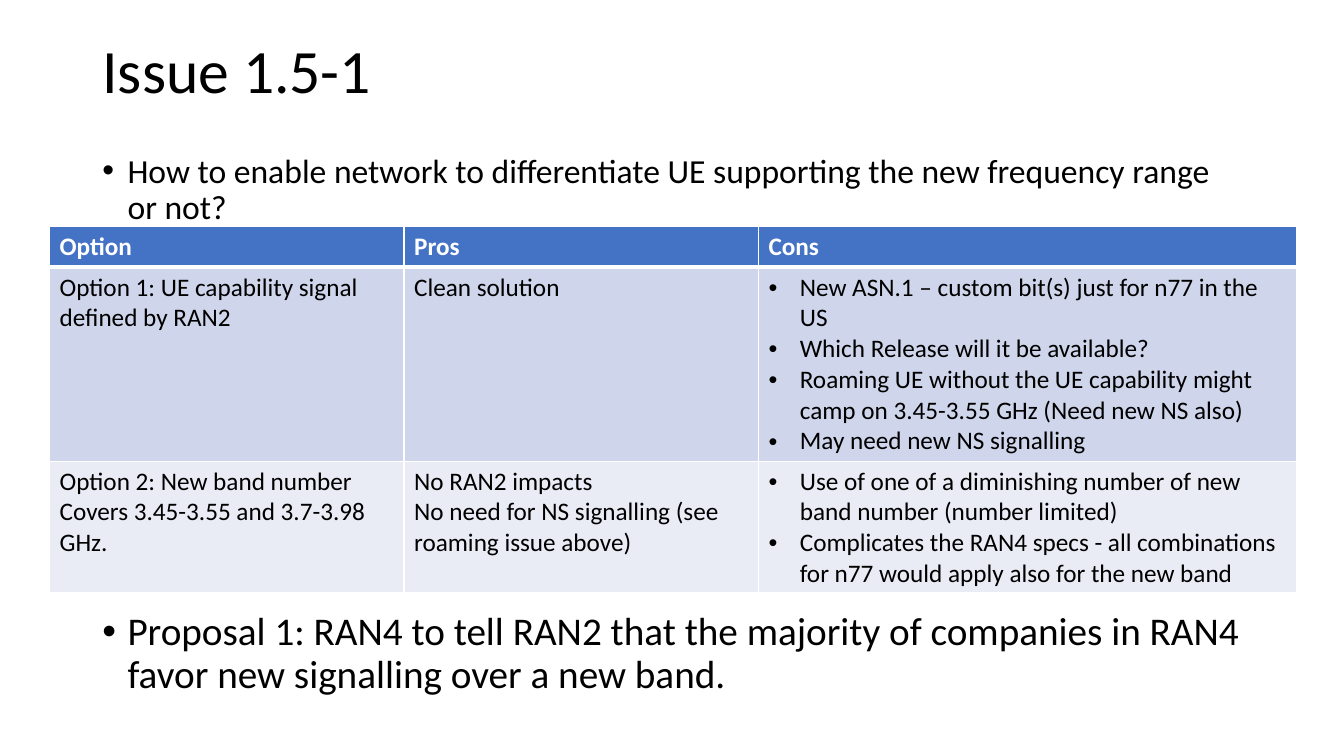
"""Build the Issue 1.5-1 slide comparing two signalling options."""
from dataclasses import dataclass

import pptx
import pptx.dml.color
import pptx.enum.text
import pptx.oxml.ns
import pptx.util
from lxml import etree

COLORS = {
    "text": "000000",
    "white": "FFFFFF",
    "header": "4472C4",
    "option 1": "CFD5EA",
    "option 2": "E9EBF5",
}
FONT = "Calibri"
SLIDE_WIDTH = pptx.util.Inches(13.33)
SLIDE_HEIGHT = pptx.util.Inches(7.5)
GRID_COLUMNS, GRID_ROWS = 160, 90


@dataclass(frozen=True)
class Area:
    column: float
    row: float
    columns: float
    rows: float

    def lengths(self) -> tuple[int, int, int, int]:
        return across(self.column), down(self.row), across(self.columns), down(self.rows)


@dataclass(frozen=True)
class TextStyle:
    size: float
    color: str = "text"
    bold: bool = False
    line_spacing: float = 1.0
    bullet_indent: float = 0


@dataclass(frozen=True)
class Statement:
    area: Area
    text: str
    size: float


@dataclass(frozen=True)
class OptionRow:
    rows: float
    fill: str
    option: str
    pros: tuple[str, ...]
    cons: tuple[str, ...]


TITLE = Statement(Area(11, 0, 138, 17.4), "Issue 1.5-1", 44)
STATEMENTS = (
    Statement(
        Area(11, 17.75, 138, 12.25),
        "How to enable network to differentiate UE supporting the new frequency range or not?",
        24,
    ),
    Statement(
        Area(11, 72.25, 138, 12.25),
        "Proposal 1: RAN4 to tell RAN2 that the majority of companies in RAN4 "
        "favor new signalling over a new band.",
        28,
    ),
)
TABLE_COLUMN, TABLE_ROW = 5.9, 26.9
TABLE_COLUMNS = (42.2, 42.2, 64)
OPTION_ROWS = (
    OptionRow(4.9, "header", "Option", ("Pros",), ("Cons",)),
    OptionRow(
        23.1,
        "option 1",
        "Option 1: UE capability signal defined by RAN2",
        ("Clean solution",),
        (
            "New ASN.1 – custom bit(s) just for n77 in the US",
            "Which Release will it be available?",
            "Roaming UE without the UE capability might camp on 3.45-3.55 GHz (Need new NS also)",
            "May need new NS signalling",
        ),
    ),
    OptionRow(
        15.3,
        "option 2",
        "Option 2: New band number Covers 3.45-3.55 and 3.7-3.98 GHz.",
        ("No RAN2 impacts", "No need for NS signalling (see roaming issue above)"),
        (
            "Use of one of a diminishing number of new band number (number limited)",
            "Complicates the RAN4 specs - all combinations for n77 would apply also for the new band",
        ),
    ),
)


def across(columns: float) -> int:
    return round(SLIDE_WIDTH * columns / GRID_COLUMNS)


def down(rows: float) -> int:
    return round(SLIDE_HEIGHT * rows / GRID_ROWS)


def rgb(name: str) -> pptx.dml.color.RGBColor:
    return pptx.dml.color.RGBColor.from_string(COLORS[name])


def add_bullet(paragraph, indent: float) -> None:
    properties = paragraph._p.get_or_add_pPr()
    properties.set("marL", str(pptx.util.Inches(indent)))
    properties.set("indent", str(-pptx.util.Inches(indent)))
    for tag, attribute, value in (("a:buFont", "typeface", "Arial"), ("a:buChar", "char", "•")):
        element = etree.SubElement(properties, pptx.oxml.ns.qn(tag))
        element.set(attribute, value)


def write_text(text_frame, texts: tuple[str, ...], style: TextStyle) -> None:
    text_frame.word_wrap = True
    for index, text in enumerate(texts):
        paragraph = text_frame.add_paragraph() if index else text_frame.paragraphs[0]
        if style.bullet_indent:
            add_bullet(paragraph, style.bullet_indent)
        paragraph.alignment = pptx.enum.text.PP_ALIGN.LEFT
        paragraph.line_spacing = style.line_spacing
        run = paragraph.add_run()
        run.text = text
        run.font.name = FONT
        run.font.size = pptx.util.Pt(style.size)
        run.font.bold = style.bold
        run.font.color.rgb = rgb(style.color)


def add_title(slide) -> None:
    title = slide.shapes.title
    title.left, title.top, title.width, title.height = TITLE.area.lengths()
    title.text_frame.vertical_anchor = pptx.enum.text.MSO_ANCHOR.MIDDLE
    title.text_frame.auto_size = pptx.enum.text.MSO_AUTO_SIZE.NONE
    write_text(title.text_frame, (TITLE.text,), TextStyle(TITLE.size, line_spacing=0.9))


def add_statement(slide, statement: Statement) -> None:
    shape = slide.shapes.add_textbox(*statement.area.lengths())
    style = TextStyle(statement.size, line_spacing=0.9, bullet_indent=0.25)
    write_text(shape.text_frame, (statement.text,), style)


def set_borders(cell, bottom: float) -> None:
    properties = cell._tc.get_or_add_tcPr()
    for index, (side, width) in enumerate((("L", 1), ("R", 1), ("T", 1), ("B", bottom))):
        line = etree.Element(pptx.oxml.ns.qn(f"a:ln{side}"), w=str(pptx.util.Pt(width)))
        fill = etree.SubElement(line, pptx.oxml.ns.qn("a:solidFill"))
        etree.SubElement(fill, pptx.oxml.ns.qn("a:srgbClr"), val=COLORS["white"])
        properties.insert(index, line)


def add_option_table(slide) -> None:
    area = Area(
        TABLE_COLUMN, TABLE_ROW, sum(TABLE_COLUMNS), sum(row.rows for row in OPTION_ROWS)
    )
    table = slide.shapes.add_table(
        len(OPTION_ROWS), len(TABLE_COLUMNS), *area.lengths()
    ).table
    for column, columns in zip(table.columns, TABLE_COLUMNS):
        column.width = across(columns)
    for row_index, option_row in enumerate(OPTION_ROWS):
        table.rows[row_index].height = down(option_row.rows)
        is_header = row_index == 0
        contents = ((option_row.option,), option_row.pros, option_row.cons)
        for column_index, texts in enumerate(contents):
            cell = table.cell(row_index, column_index)
            cell.fill.solid()
            cell.fill.fore_color.rgb = rgb(option_row.fill)
            has_bullets = column_index == 2 and not is_header
            style = TextStyle(
                18,
                color="white" if is_header else "text",
                bold=is_header,
                bullet_indent=0.31 if has_bullets else 0,
            )
            write_text(cell.text_frame, texts, style)
            set_borders(cell, bottom=3 if is_header else 1)


def main() -> None:
    presentation = pptx.Presentation()
    presentation.slide_width = SLIDE_WIDTH
    presentation.slide_height = SLIDE_HEIGHT
    slide = presentation.slides.add_slide(presentation.slide_layouts.get_by_name("Title Only"))
    add_title(slide)
    for statement in STATEMENTS:
        add_statement(slide, statement)
    add_option_table(slide)
    presentation.save("out.pptx")


if __name__ == "__main__":
    main()
